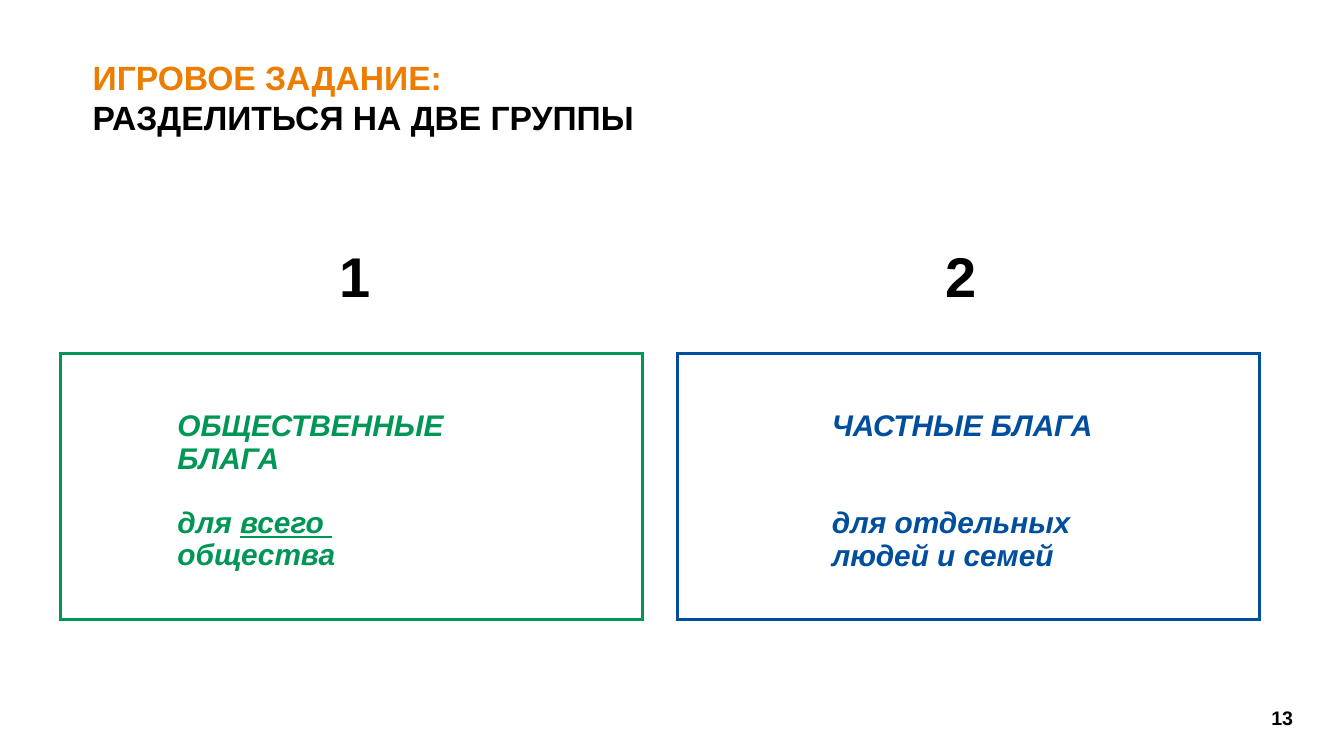
from lxml import etree
from pptx import Presentation
from pptx.dml.color import RGBColor
from pptx.enum.shapes import MSO_SHAPE
from pptx.enum.text import MSO_ANCHOR, PP_ALIGN
from pptx.oxml.ns import qn
from pptx.util import Inches, Pt

RECTANGLE = MSO_SHAPE.RECTANGLE
TOP, MIDDLE = MSO_ANCHOR.TOP, MSO_ANCHOR.MIDDLE
LEFT, CENTER = PP_ALIGN.LEFT, PP_ALIGN.CENTER

WIDTH = 10
HEIGHT = WIDTH * 9 / 16
ORANGE, GREEN, BLUE, BLACK = "ED7D00", "009655", "004E9E", "000000"
CARD_LEFT, CARD_TOP, CARD_WIDTH, CARD_HEIGHT = 0.45, 2.63, 4.33, 1.98
CARD_STEP = 4.59
LINE = 17.3

GROUPS = [
    {"number": "1", "color": GREEN, "number_left": 1.66, "text_left": 0.87, "gap": LINE,
     "heading": "ОБЩЕСТВЕННЫЕ БЛАГА",
     "detail": [("для ", False), ("всего \v", True), ("общества", False)]},
    {"number": "2", "color": BLUE, "number_left": 1.58, "text_left": 1.15, "gap": 2 * LINE,
     "heading": "ЧАСТНЫЕ БЛАГА",
     "detail": [("для отдельных\vлюдей и семей", False)]},
]


def rgb(color):
    return RGBColor.from_string(color)


def add_box(page, box, inset=0, anchor=TOP):
    frame = page.shapes.add_textbox(*map(Inches, box)).text_frame
    frame.word_wrap = True
    frame.vertical_anchor = anchor
    frame.margin_left = frame.margin_right = Inches(inset)
    frame.margin_top = frame.margin_bottom = Inches(inset)
    return frame


def add_span(para, text, size, color, italic=False, underline=False):
    for index, piece in enumerate(text.split("\v")):
        if index:
            para.add_line_break()
        if not piece:
            continue
        span = para.add_run()
        span.text = piece
        span.font.name = "Arial"
        span.font.size = Pt(size)
        span.font.bold = True
        span.font.italic = italic
        span.font.underline = underline
        span.font.color.rgb = rgb(color)


def add_title(page, box):
    para = add_box(page, box).paragraphs[0]
    para.alignment = LEFT
    add_span(para, "ИГРОВОЕ ЗАДАНИЕ:\v", 18, ORANGE)
    add_span(para, "РАЗДЕЛИТЬСЯ НА ДВЕ ГРУППЫ", 18, BLACK)


def add_number(page, box, text, size):
    para = add_box(page, box, 0.06, MIDDLE).paragraphs[0]
    para.alignment = CENTER
    add_span(para, text, size, BLACK)


def add_group(page, box, group):
    left, top, width, height = box
    card = page.shapes.add_shape(RECTANGLE, *map(Inches, box))
    card.shadow.inherit = False
    card.fill.background()
    card.line.color.rgb = rgb(group["color"])
    card.line.width = Pt(1.5)
    outline = card.element.spPr.find(qn("a:ln"))
    etree.SubElement(outline, qn("a:miter")).set("lim", "800000")

    add_number(page, (left + group["number_left"], top - 0.89, 1.06, 0.62), group["number"], 30)

    frame = add_box(page, (left + group["text_left"], top + 0.43, 2.68, 1.31))
    heading, detail = frame.paragraphs[0], frame.add_paragraph()
    heading.line_spacing = detail.line_spacing = 0.9
    detail.space_before = Pt(group["gap"])
    add_span(heading, group["heading"], 16, group["color"], italic=True)
    for text, underline in group["detail"]:
        add_span(detail, text, 16, group["color"], italic=True, underline=underline)


def main():
    deck = Presentation()
    deck.slide_width, deck.slide_height = Inches(WIDTH), Inches(HEIGHT)
    page = deck.slides.add_slide(deck.slide_layouts[6])
    add_title(page, (0.69, 0.42, 7.53, 0.75))
    for column, group in enumerate(GROUPS):
        left = CARD_LEFT + column * CARD_STEP
        add_group(page, (left, CARD_TOP, CARD_WIDTH, CARD_HEIGHT), group)
    add_number(page, (9.14, 5.19, 0.8, 0.3), "13", 10.5)
    deck.save("out.pptx")


if __name__ == "__main__":
    main()
